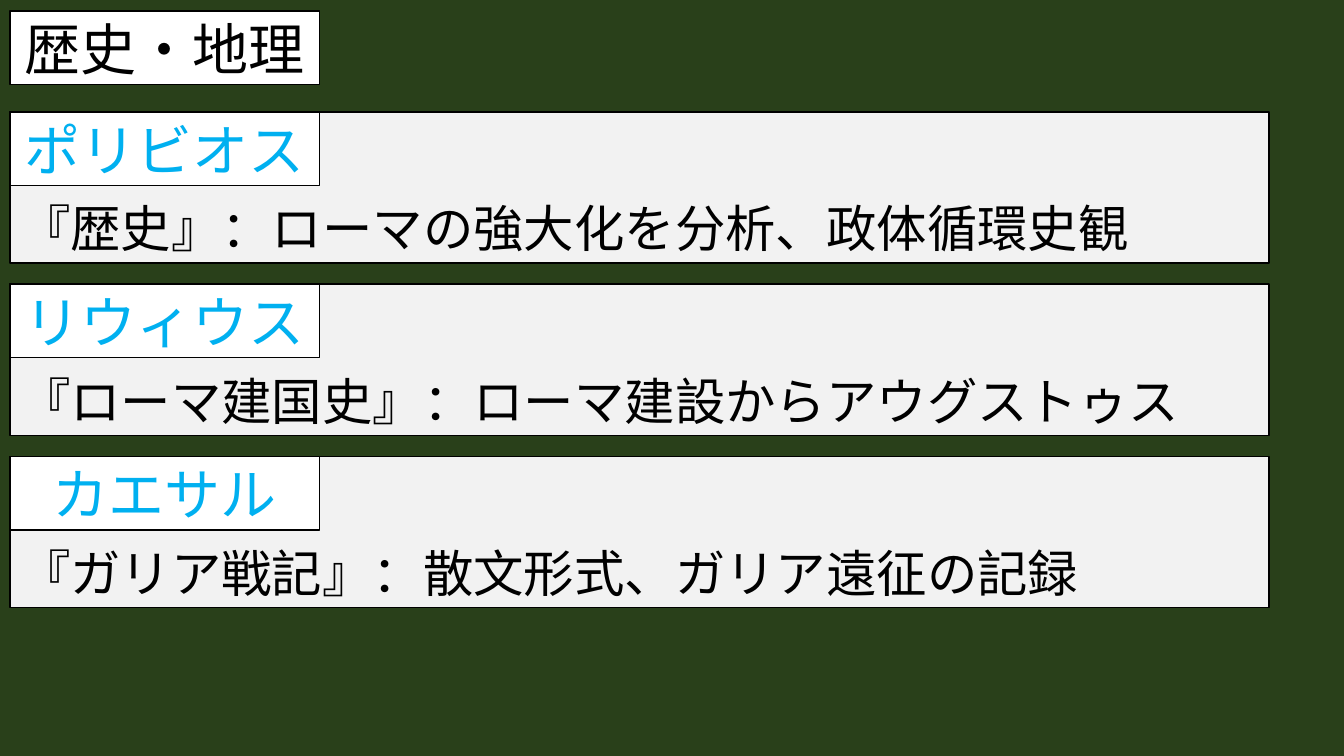
from dataclasses import dataclass

from pptx import Presentation
from pptx.dml.color import RGBColor
from pptx.enum.shapes import MSO_SHAPE
from pptx.enum.text import MSO_ANCHOR, PP_ALIGN
from pptx.util import Pt

TITLE = "歴史・地理"
AUTHORS = [
    ("ポリビオス", "『歴史』：ローマの強大化を分析、政体循環史観"),
    ("リウィウス", "『ローマ建国史』：ローマ建設からアウグストゥス"),
    ("カエサル", "『ガリア戦記』：散文形式、ガリア遠征の記録"),
]


@dataclass(frozen=True)
class Theme:
    font: str = "Roboto"
    label_size: int = 40
    work_size: int = 36
    background: str = "29401A"
    panel: str = "F2F2F2"
    label: str = "FFFFFF"
    ink: str = "000000"
    accent: str = "00B0F0"


THEME = Theme()
LEFT = 7.2
TITLE_TOP = 7.9
PANELS_TOP = 79.9
PANEL_PITCH = 123.1
PANEL_SIZE = (899.3, 108)
LABEL_SIZE = (221, 52.6)


def add_box(slide, top, size, fill, text, text_size, text_color, align, anchor):
    width, height = size
    shape = slide.shapes.add_shape(
        MSO_SHAPE.RECTANGLE, Pt(LEFT), Pt(top), Pt(width), Pt(height)
    )
    shape.shadow.inherit = False
    shape.fill.solid()
    shape.fill.fore_color.rgb = RGBColor.from_string(fill)
    shape.line.color.rgb = RGBColor.from_string(THEME.ink)
    shape.line.width = Pt(1)

    text_frame = shape.text_frame
    text_frame.text = text
    text_frame.word_wrap = True
    text_frame.vertical_anchor = anchor
    paragraph = text_frame.paragraphs[0]
    paragraph.alignment = align
    font = paragraph.runs[0].font
    font.name = THEME.font
    font.size = Pt(text_size)
    font.color.rgb = RGBColor.from_string(text_color)


def add_label(slide, top, text, color):
    add_box(slide, top, LABEL_SIZE, THEME.label, text, THEME.label_size, color,
            PP_ALIGN.CENTER, MSO_ANCHOR.MIDDLE)


def add_author(slide, top, name, work):
    """Add a panel describing the work, with the author's label in its corner."""
    add_box(slide, top, PANEL_SIZE, THEME.panel, work, THEME.work_size, THEME.ink,
            PP_ALIGN.LEFT, MSO_ANCHOR.BOTTOM)
    add_label(slide, top, name, THEME.accent)


def main():
    presentation = Presentation()
    presentation.slide_width = Pt(960)
    presentation.slide_height = Pt(540)
    slide = presentation.slides.add_slide(presentation.slide_layouts[6])
    slide.background.fill.solid()
    slide.background.fill.fore_color.rgb = RGBColor.from_string(THEME.background)

    for index, (name, work) in enumerate(AUTHORS):
        add_author(slide, PANELS_TOP + index * PANEL_PITCH, name, work)
    add_label(slide, TITLE_TOP, TITLE, THEME.ink)
    presentation.save("out.pptx")


if __name__ == "__main__":
    main()
